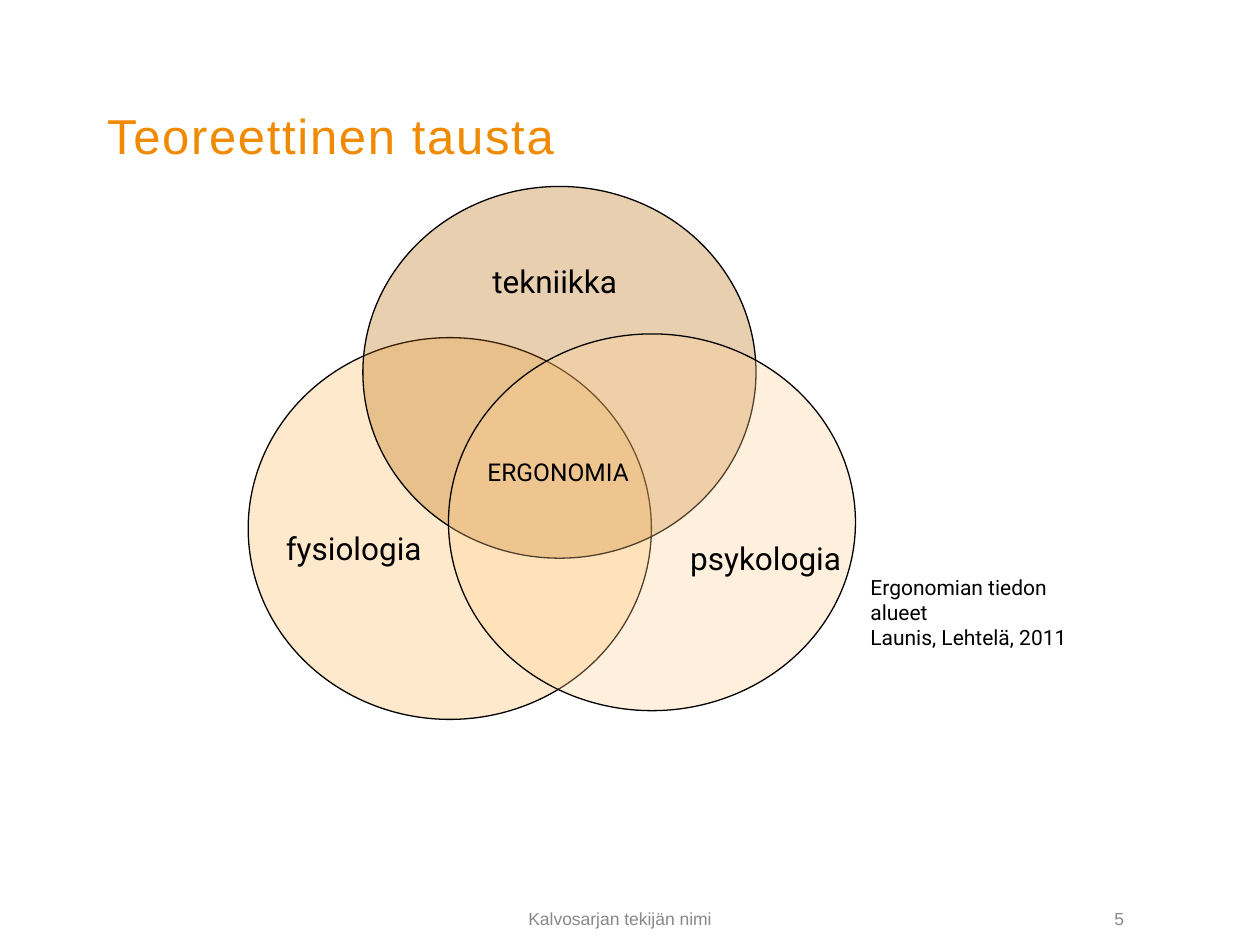
import pptx
import pptx.util
import pptx.dml.color
import pptx.enum.shapes
import pptx.enum.text
import pptx.oxml.ns
import lxml.etree

THEME = {
    "colors": {"title": "F08A00", "footer": "878989", "ink": "000000",
               "physiology": "FFBA5D", "technology": "B46700", "psychology": "FFD193"},
    "fonts": {"heading": "Arial", "body": "Roboto"},
    "sizes": {"title": 28, "field": 18, "center": 14, "source": 12, "footer": 10},
    "opacity": 31,
    "outline": 0.75,
}
COLUMNS, ROWS = 100, 75
ALIGN = pptx.enum.text.PP_ALIGN
ANCHOR = pptx.enum.text.MSO_ANCHOR

deck = pptx.Presentation()
deck.slide_width = pptx.util.Inches(10)
deck.slide_height = pptx.util.Inches(7.5)
page = deck.slides.add_slide(deck.slide_layouts[5])


def grid(left, top, width, height):
    column, row = deck.slide_width / COLUMNS, deck.slide_height / ROWS
    return [round(left * column), round(top * row), round(width * column), round(height * row)]


def write(box, lines, font, size, color, align=ALIGN.LEFT, anchor=ANCHOR.TOP, wrap=True):
    frame = box.text_frame
    frame.text = "\n".join(lines)
    frame_format = {"word_wrap": wrap, "vertical_anchor": anchor,
                    "auto_size": pptx.enum.text.MSO_AUTO_SIZE.NONE}
    for name, value in frame_format.items():
        setattr(frame, name, value)
    font_format = {"name": THEME["fonts"][font], "bold": False,
                   "size": pptx.util.Pt(THEME["sizes"][size])}
    for para in frame.paragraphs:
        para.alignment = align
        for span in para.runs:
            for name, value in font_format.items():
                setattr(span.font, name, value)
            span.font.color.rgb = pptx.dml.color.RGBColor.from_string(THEME["colors"][color])


title = page.shapes.title
title.left, title.top, title.width, title.height = grid(7.5, 7.8, 85, 5.8)
write(title, ["Teoreettinen tausta"], "heading", "title", "title", anchor=ANCHOR.MIDDLE)
title.text_frame.paragraphs[0].runs[0].font._element.set("spc", "100")

footers = [
    ("Kalvosarjan tekijän nimi", (25, 71.6, 48.4, 3.4), ALIGN.CENTER),
    ("5", (74.2, 71.6, 16, 3.4), ALIGN.RIGHT),
]
for text, area, align in footers:
    box = page.shapes.add_textbox(*grid(*area))
    write(box, [text], "heading", "footer", "footer", align)

circles = [
    ("physiology", (19.7, 26.8, 32, 30.3)),
    ("technology", (28.8, 14.8, 31.2, 29.5)),
    ("psychology", (35.6, 26.5, 32.3, 29.9)),
]
for color, area in circles:
    circle = page.shapes.add_shape(pptx.enum.shapes.MSO_SHAPE.OVAL, *grid(*area))
    circle.shadow.inherit = False
    circle.fill.solid()
    circle.fill.fore_color.rgb = pptx.dml.color.RGBColor.from_string(THEME["colors"][color])
    tint = circle._element.spPr.find(".//" + pptx.oxml.ns.qn("a:srgbClr"))
    alpha = lxml.etree.SubElement(tint, pptx.oxml.ns.qn("a:alpha"))
    alpha.set("val", str(THEME["opacity"] * 1000))
    circle.line.color.rgb = pptx.dml.color.RGBColor.from_string(THEME["colors"]["ink"])
    circle.line.width = pptx.util.Pt(THEME["outline"])

labels = [
    (["tekniikka"], (38.1, 20.3, 12.4, 4), "field", False),
    (["fysiologia"], (21.7, 41.5, 14.5, 4), "field", False),
    (["psykologia"], (53.8, 42.3, 15.3, 4), "field", False),
    (["ERGONOMIA"], (37.7, 35.8, 15.2, 3.4), "center", False),
    (["Ergonomian tiedon alueet", "Launis, Lehtelä, 2011"], (68.1, 45.1, 19.1, 7.1), "source", True),
]
for lines, area, size, wrap in labels:
    box = page.shapes.add_textbox(*grid(*area))
    write(box, lines, "body", size, "ink", wrap=wrap)

deck.save("out.pptx")
